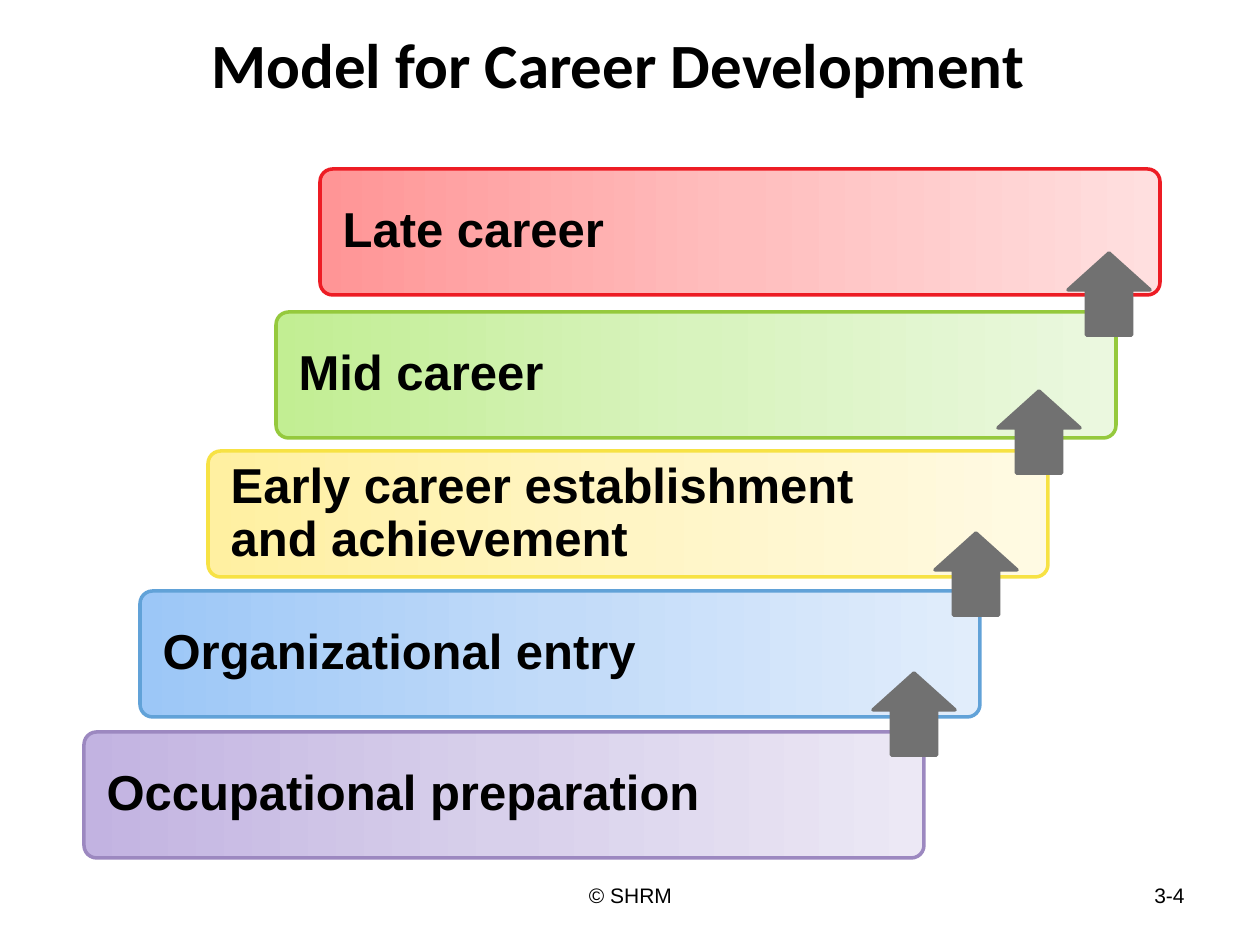
from copy import deepcopy

from pptx import Presentation
from pptx.dml.color import RGBColor
from pptx.enum.shapes import MSO_SHAPE as Shape
from pptx.enum.text import MSO_ANCHOR as Anchor, PP_ALIGN as Align
from pptx.oxml.ns import qn
from pptx.util import Emu, Pt

PX_PER_INCH = 126
COLORS = {"text": "000000", "arrow": "717171"}

# label, left, top, line colour, gradient colours
STAGES = [
    ("Late career", 320, 169, "ED1C24", ("FF9596", "FFBEBE", "FFDFDF")),
    ("Mid career", 276, 312, "95C93D", ("C2EE93", "D8F3BE", "EBF8DF")),
    ("Early career establishment and achievement", 208, 451, "F7E244",
     ("FFF0A1", "FFF5C5", "FFFAE3")),
    ("Organizational entry", 140, 591, "61A2D8", ("9CC7F7", "C2DBF9", "E1EDFB")),
    ("Occupational preparation", 84, 732, "9C88C0", ("C2B3E1", "D8D0EB", "ECE8F5")),
]
ARROWS = [(1068, 253), (998, 391), (935, 533), (873, 673)]
BAR_WIDTH, BAR_HEIGHT, ARROW_SIZE = 840, 126, 82


def px(length):
    return Emu(round(length * 914400 / PX_PER_INCH))


def rgb(color):
    return RGBColor.from_string(color)


class SlideBuilder:
    def __init__(self, slide):
        self.slide = slide

    def set_text(self, shape, text, size, bold=False, font="Arial",
                 align=Align.LEFT, anchor=Anchor.MIDDLE):
        frame = shape.text_frame
        frame.word_wrap = True
        frame.vertical_anchor = anchor
        paragraph = frame.paragraphs[0]
        paragraph.text = text
        paragraph.alignment = align
        paragraph.font.name = font
        paragraph.font.size = Pt(size)
        paragraph.font.bold = bold
        paragraph.font.color.rgb = rgb(COLORS["text"])
        return paragraph

    def text(self, box, text, size, **style):
        shape = self.slide.shapes.add_textbox(*map(px, box))
        self.set_text(shape, text, size, **style)

    def shape(self, kind, box, line, adjustments):
        shape = self.slide.shapes.add_shape(kind, *map(px, box))
        shape.shadow.inherit = False
        shape.line.color.rgb = rgb(line)
        shape.line.width = Pt(2)
        for index, value in enumerate(adjustments):
            shape.adjustments[index] = value
        return shape

    def bar(self, label, left, top, line, colors):
        box = (left, top, BAR_WIDTH, BAR_HEIGHT)
        shape = self.shape(Shape.ROUNDED_RECTANGLE, box, line, [0.1])
        fill = shape.fill
        fill.gradient()
        fill.gradient_angle = 0
        # A new gradient has two stops; add the middle one
        stops = next(shape.element.iter(qn("a:gsLst")))
        stops.insert(1, deepcopy(stops[0]))
        for index, (stop, color) in enumerate(zip(fill.gradient_stops, colors)):
            stop.position = index / 2
            stop.color.rgb = rgb(color)
        # The right margin keeps the label clear of the arrow
        frame = shape.text_frame
        frame.margin_left, frame.margin_right = px(19), px(164)
        paragraph = self.set_text(shape, label, 28, bold=True)
        paragraph.line_spacing = 0.9

    def arrow(self, left, top):
        box = (left, top, ARROW_SIZE, ARROW_SIZE)
        shape = self.shape(Shape.UP_ARROW, box, COLORS["arrow"], [0.55, 0.45])
        shape.fill.solid()
        shape.fill.fore_color.rgb = rgb(COLORS["arrow"])


def main():
    presentation = Presentation()
    presentation.slide_width, presentation.slide_height = px(1260), px(945)
    builder = SlideBuilder(presentation.slides.add_slide(presentation.slide_layouts[6]))

    # Title
    builder.text((199, 0, 1029, 126), "Model for Career Development", 36,
                 bold=True, font="Calibri")

    # Career stages, then the arrows that climb between them
    for stage in STAGES:
        builder.bar(*stage)
    for position in ARROWS:
        builder.arrow(*position)

    # Footer
    builder.text((903, 876, 294, 50), "3-4", 12, align=Align.RIGHT, anchor=Anchor.TOP)
    builder.text((431, 876, 399, 50), "© SHRM", 12, align=Align.CENTER, anchor=Anchor.TOP)

    presentation.save("out.pptx")


if __name__ == "__main__":
    main()
